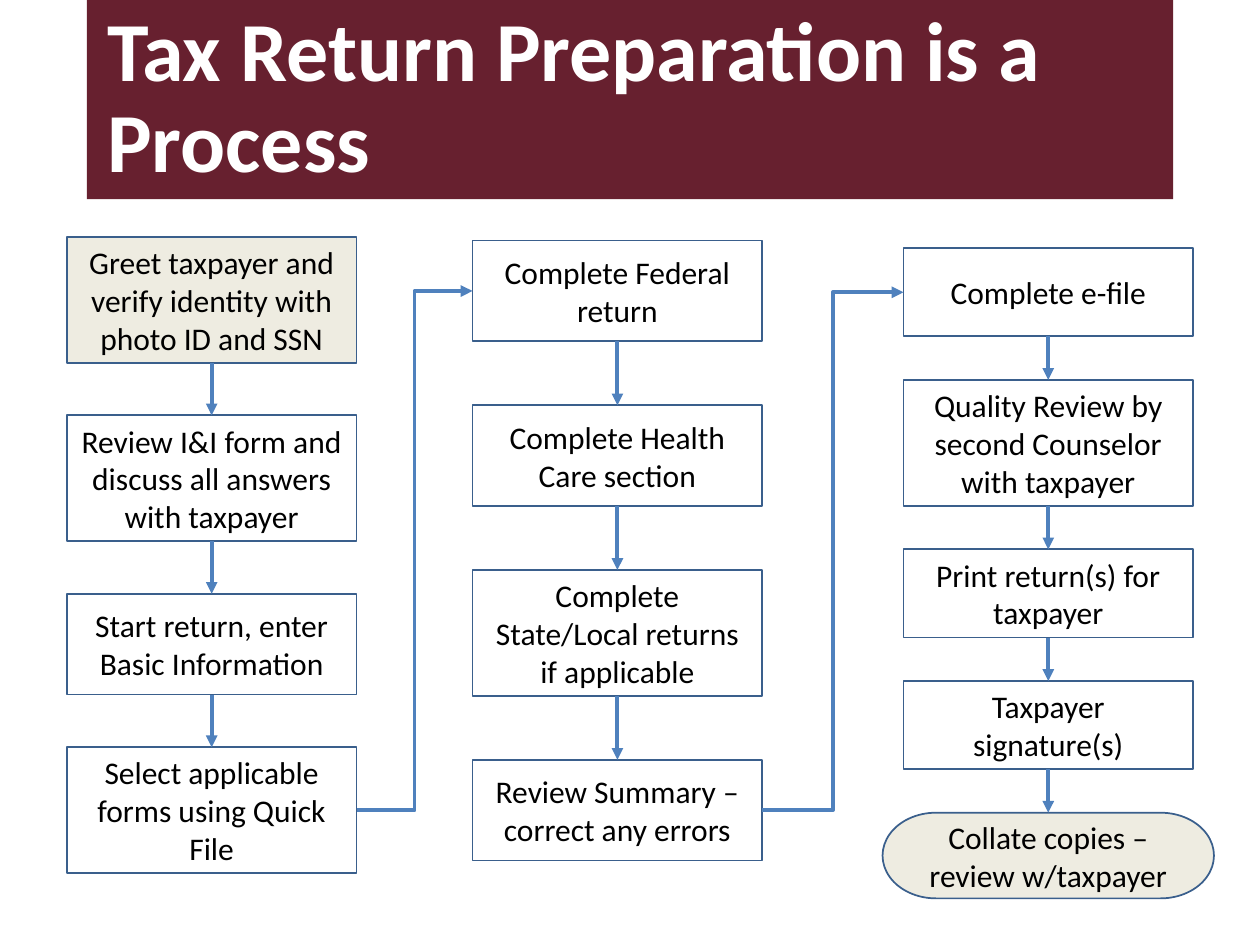
from lxml.etree import SubElement
from pptx import Presentation
from pptx.dml.color import RGBColor
from pptx.enum.shapes import MSO_CONNECTOR, MSO_SHAPE
from pptx.enum.text import MSO_ANCHOR, MSO_AUTO_SIZE, PP_ALIGN
from pptx.oxml.ns import qn
from pptx.util import Inches, Pt

# Content: each step is (text, height in inches, kind)
TITLE = "Tax Return Preparation is a Process"
STEPS = [
    [("Greet taxpayer and verify identity with photo ID and SSN", 1, "start"),
     ("Review I&I form and discuss all answers with taxpayer", 1, "step"),
     ("Start return, enter Basic Information", 0.8, "step"),
     ("Select applicable forms using Quick File", 1, "step")],
    [("Complete Federal return", 0.8, "step"),
     ("Complete Health Care section", 0.8, "step"),
     ("Complete State/Local returns if applicable", 1, "step"),
     ("Review Summary – correct any errors", 0.8, "step")],
    [("Complete e-file", 0.7, "step"),
     ("Quality Review by second Counselor with taxpayer", 1, "step"),
     ("Print return(s) for taxpayer", 0.7, "step"),
     ("Taxpayer signature(s)", 0.7, "step"),
     ("Collate copies – review w/taxpayer", 0.68, "end")],
]

# Theme and grid
THEME = {
    "font": "Calibri", "head": 48, "body": 18,
    "band": "67202F", "light": "FFFFFF", "ink": "000000",
    "tint": "EEECE1", "edge": "3A5F8C", "flow": "4F81BD",
}
MIDS = [1.68, 4.9, 8.32]                            # column centres
SPANS = [(1.88, 6.93), (1.91, 6.83), (1.97, 7.13)]  # column tops and ends
WIDE, END_WIDE = 2.3, 2.63
TOP, LEFT, BOTTOM, RIGHT = range(4)


def color(name):
    return RGBColor.from_string(THEME[name])


def write(shape, text, size="body", ink="ink", bold=False,
          align=PP_ALIGN.CENTER):
    frame = shape.text_frame
    frame.word_wrap = True
    frame.auto_size = MSO_AUTO_SIZE.NONE
    frame.vertical_anchor = MSO_ANCHOR.MIDDLE
    para = frame.paragraphs[0]
    para.alignment = align
    run = para.add_run()
    run.text = text
    font = run.font
    font.name, font.size, font.bold = THEME["font"], Pt(THEME[size]), bold
    font.color.rgb = color(ink)
    return para


def add_box(slide, text, mid, top, high, kind):
    form, wide = MSO_SHAPE.RECTANGLE, WIDE
    if kind == "end":
        form, wide = MSO_SHAPE.FLOWCHART_TERMINATOR, END_WIDE
    box = slide.shapes.add_shape(form, Inches(mid - wide / 2), Inches(top),
                                 Inches(wide), Inches(high))
    box.shadow.inherit = False
    if kind == "step":
        box.fill.background()
    else:
        box.fill.solid()
        box.fill.fore_color.rgb = color("tint")
    box.line.color.rgb = color("edge")
    box.line.width = Pt(1)
    write(box, text)
    return box


def add_column(slide, steps, mid, span):
    top, end = span
    gap = (end - top - sum(high for _, high, _ in steps)) / (len(steps) - 1)
    boxes = []
    for text, high, kind in steps:
        boxes.append(add_box(slide, text, mid, top, high, kind))
        top += high + gap
    return boxes


def join(slide, first, out, last, into, form=MSO_CONNECTOR.STRAIGHT):
    line = slide.shapes.add_connector(form, 0, 0, 0, 0)
    line.begin_connect(first, out)
    line.end_connect(last, into)
    line.line.color.rgb = color("flow")
    line.line.width = Pt(2.25)
    SubElement(line.line._get_or_add_ln(), qn("a:tailEnd"), type="triangle")
    SubElement(line._element.spPr, qn("a:effectLst"))


def main():
    deck = Presentation()
    deck.slide_width, deck.slide_height = Inches(10), Inches(7.5)
    slide = deck.slides.add_slide(deck.slide_layouts[5])

    # Title band
    head = slide.shapes.title
    head.left, head.top = Inches(0.69), 0
    head.width, head.height = Inches(8.62), Inches(1.58)
    head.fill.solid()
    head.fill.fore_color.rgb = color("band")
    para = write(head, TITLE, size="head", ink="light", bold=True,
                 align=PP_ALIGN.LEFT)
    para.line_spacing = 0.9
    para._p.get_or_add_pPr().set("marL", str(Inches(0.06)))

    # Steps, column by column
    flow = [add_column(slide, *part) for part in zip(STEPS, MIDS, SPANS)]

    # Arrows down each column, then across to the next
    for boxes in flow:
        for first, last in zip(boxes, boxes[1:]):
            join(slide, first, BOTTOM, last, TOP)
    for here, there in zip(flow, flow[1:]):
        join(slide, here[-1], RIGHT, there[0], LEFT, MSO_CONNECTOR.ELBOW)

    deck.save("out.pptx")


if __name__ == "__main__":
    main()
